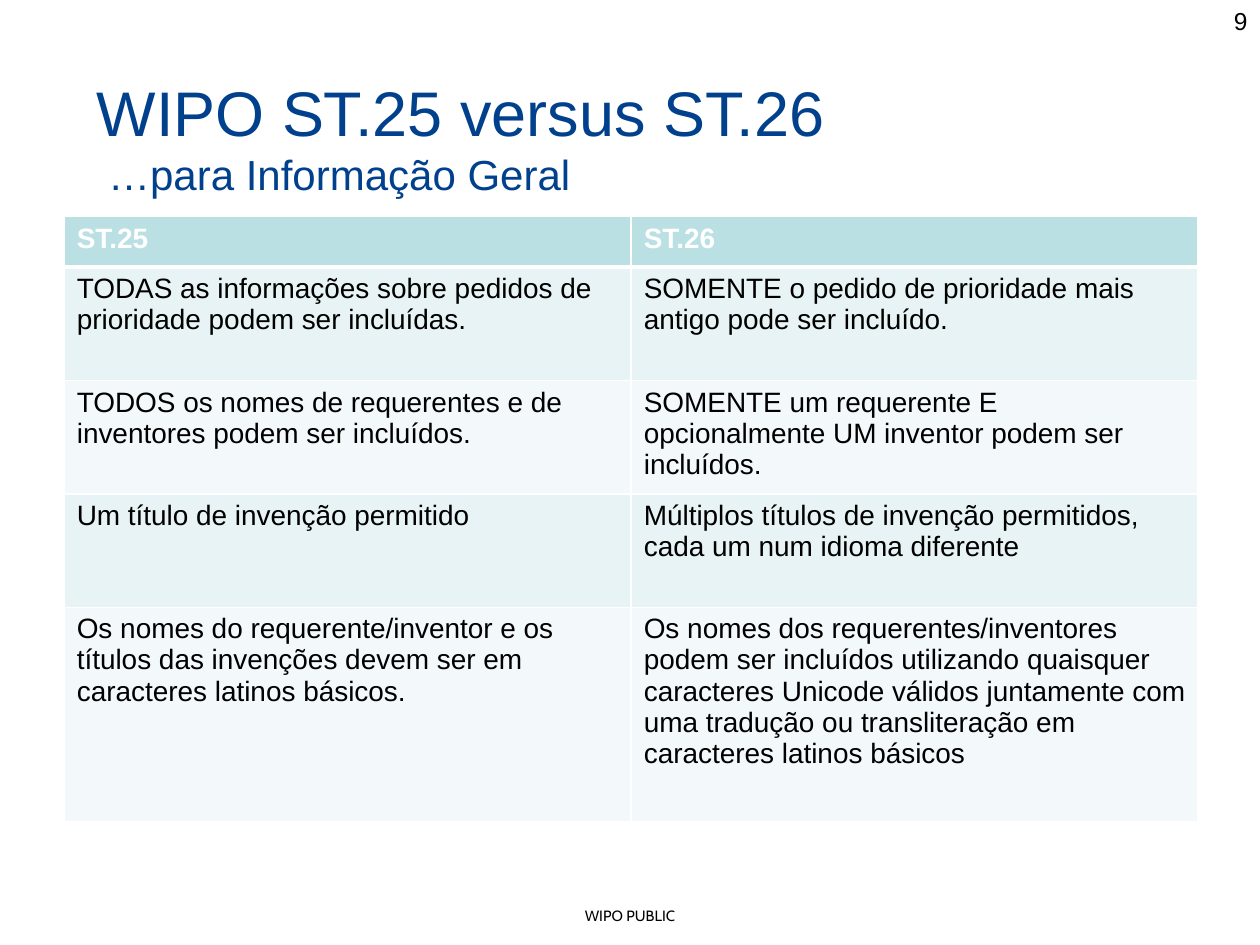
"""Build a slide comparing WIPO ST.25 and ST.26 for general information."""
from lxml import etree
from pptx import Presentation, util as u
from pptx.dml.color import RGBColor
from pptx.enum import text
from pptx.oxml import ns

BLACK = RGBColor(0x00, 0x00, 0x00)
WHITE = RGBColor(0xFF, 0xFF, 0xFF)
NAVY = RGBColor(0x00, 0x40, 0x8C)
HEADER_TEAL = RGBColor(0xBB, 0xE0, 0xE3)
BANDS = [RGBColor(0xE7, 0xF3, 0xF4), RGBColor(0xF3, 0xF9, 0xFA)]

COMPARISON = [
    ("ST.25", "ST.26"),
    ("TODAS as informações sobre pedidos de prioridade podem ser incluídas.",
     "SOMENTE o pedido de prioridade mais antigo pode ser incluído."),
    ("TODOS os nomes de requerentes e de inventores podem ser incluídos.",
     "SOMENTE um requerente E opcionalmente UM inventor podem ser incluídos."),
    ("Um título de invenção permitido",
     "Múltiplos títulos de invenção permitidos, cada um num idioma diferente"),
    ("Os nomes do requerente/inventor e os títulos das invenções devem ser em "
     "caracteres latinos básicos.",
     "Os nomes dos requerentes/inventores podem ser incluídos utilizando quaisquer "
     "caracteres Unicode válidos juntamente com uma tradução ou transliteração em "
     "caracteres latinos básicos"),
]
ROW_HEIGHTS = [0.4, 0.9, 0.9, 0.9, 1.7]
COLUMN_WIDTH = 4.5

presentation = Presentation()
presentation.slide_width = u.Inches(10)
presentation.slide_height = u.Inches(7.5)
slide = presentation.slides.add_slide(presentation.slide_layouts[6])


def add_run(paragraph, wording, size, color, font="Arial", bold=False):
    run = paragraph.add_run()
    run.text = wording
    run.font.name = font
    run.font.size = u.Pt(size)
    run.font.bold = bold
    run.font.color.rgb = color


def add_frame(left, top, width, height):
    frame = slide.shapes.add_textbox(*map(u.Inches, (left, top, width, height))).text_frame
    frame.word_wrap = True
    return frame


footer = add_frame(0, 7.15, 10, 0.24).paragraphs[0]
footer.alignment = text.PP_ALIGN.CENTER
add_run(footer, "WIPO PUBLIC", 8.5, BLACK, "Cabin")

page_number = add_frame(7.67, 0, 2.33, 0.52).paragraphs[0]
page_number.alignment = text.PP_ALIGN.RIGHT
add_run(page_number, "9", 14, BLACK)

title = add_frame(0.67, 0.47, 9, 1.25)
title.margin_top = u.Inches(0.11)
add_run(title.paragraphs[0], "WIPO ST.25 versus ST.26", 36, NAVY)
subtitle = title.add_paragraph()
subtitle._p.get_or_add_pPr().set("marL", str(u.Inches(0.09)))
add_run(subtitle, "…para Informação Geral", 24, NAVY)

table = slide.shapes.add_table(
    len(COMPARISON), 2, u.Inches(0.51), u.Inches(1.72),
    u.Inches(2 * COLUMN_WIDTH), u.Inches(sum(ROW_HEIGHTS))).table
for column in table.columns:
    column.width = u.Inches(COLUMN_WIDTH)

for row_index, (wordings, height) in enumerate(zip(COMPARISON, ROW_HEIGHTS)):
    table.rows[row_index].height = u.Inches(height)
    is_header = row_index == 0
    for column_index, wording in enumerate(wordings):
        cell = table.cell(row_index, column_index)
        add_run(cell.text_frame.paragraphs[0], wording, 16,
                WHITE if is_header else BLACK, bold=is_header)
        properties = cell._tc.get_or_add_tcPr()
        for side in ("lnL", "lnR", "lnT", "lnB"):
            is_thick = (row_index, side) in ((0, "lnB"), (1, "lnT"))
            border = etree.SubElement(properties, ns.qn(f"a:{side}"),
                                      w=str(u.Pt(3 if is_thick else 1)))
            fill = etree.SubElement(border, ns.qn("a:solidFill"))
            etree.SubElement(fill, ns.qn("a:srgbClr"), val=str(WHITE))
        cell.fill.solid()
        cell.fill.fore_color.rgb = HEADER_TEAL if is_header else BANDS[(row_index - 1) % 2]

presentation.save("out.pptx")
